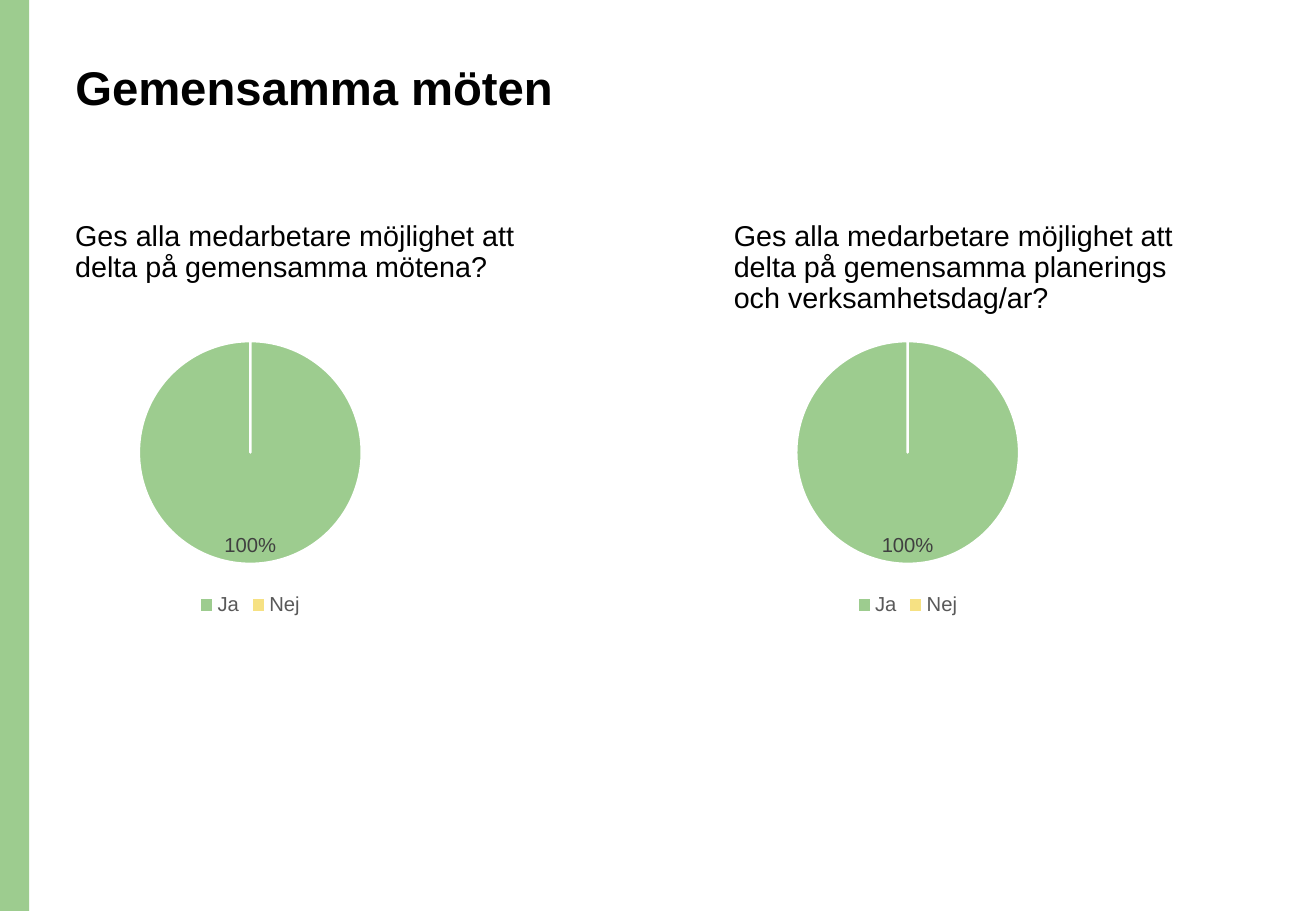
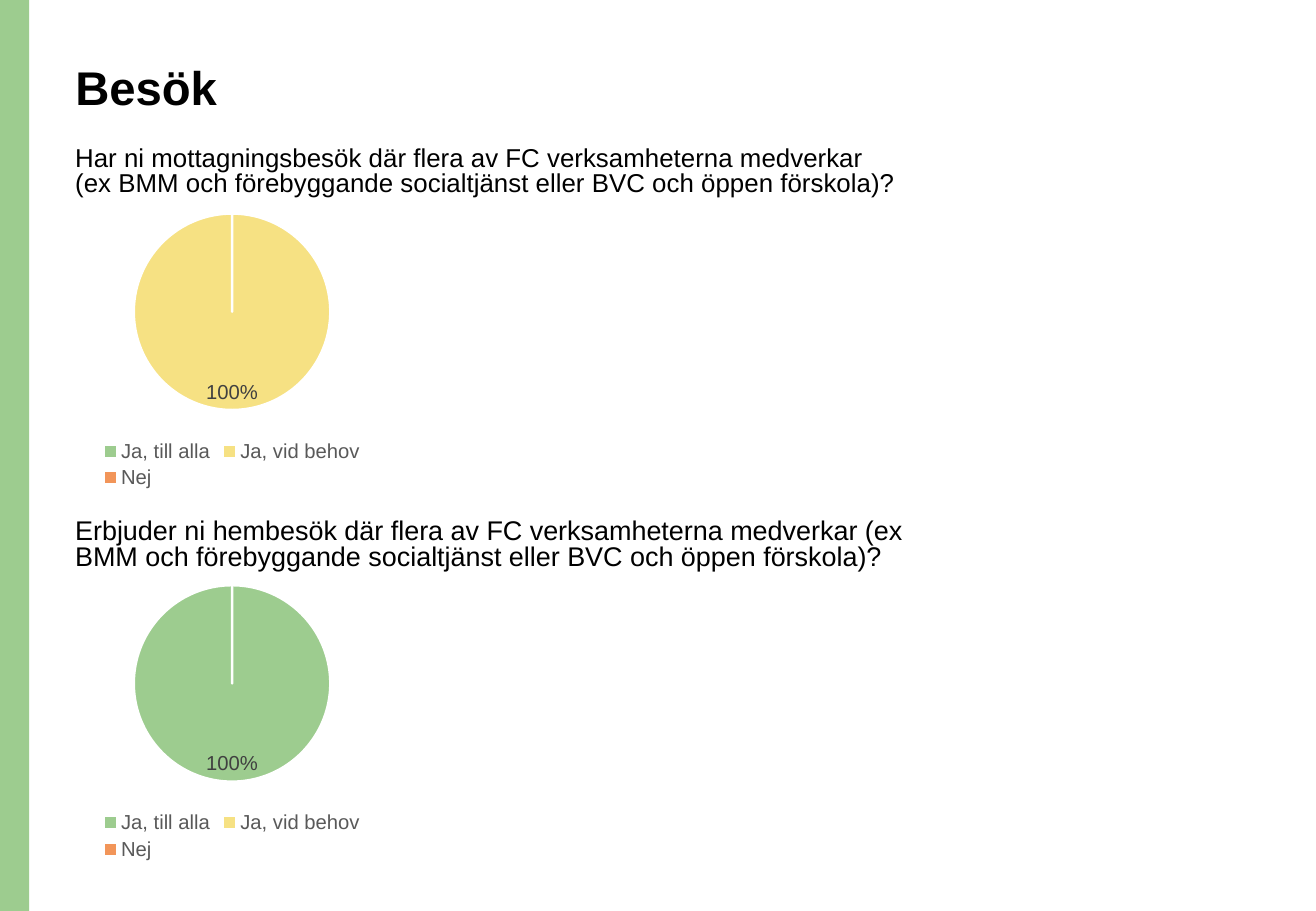
from lxml import etree
from pptx import Presentation
from pptx.chart.data import CategoryChartData
from pptx.dml.color import RGBColor
from pptx.enum.chart import XL_CHART_TYPE, XL_LABEL_POSITION, XL_LEGEND_POSITION
from pptx.enum.shapes import MSO_SHAPE
from pptx.enum.text import MSO_ANCHOR, MSO_AUTO_SIZE, PP_ALIGN
from pptx.oxml import parse_xml
from pptx.util import Inches, Pt

PIE = XL_CHART_TYPE.PIE
INSIDE_END = XL_LABEL_POSITION.INSIDE_END
LEGEND_BOTTOM = XL_LEGEND_POSITION.BOTTOM
RECTANGLE = MSO_SHAPE.RECTANGLE
TOP = MSO_ANCHOR.TOP
NO_AUTO_SIZE = MSO_AUTO_SIZE.NONE
LEFT = PP_ALIGN.LEFT

FONT = "Arial"
COLORS = {name: RGBColor.from_string(value) for name, value in {
    "green": "9DCC8F", "yellow": "F6E183", "orange": "F29559",
    "black": "000000", "white": "FFFFFF", "label": "404040", "legend": "595959",
}.items()}
SLICE_COLORS = ["green", "yellow", "orange"]
CHART_NS = "http://schemas.openxmlformats.org/drawingml/2006/chart"
MARGIN = 0.52
YES_NO = ["Ja", "Nej"]
VISIT_ANSWERS = ["Ja, till alla", "Ja, vid behov", "Nej"]

# Each question: text, box (left, top, width, height), size, line spacing,
# chart position (left, top), categories, values
SLIDES = [
    ("Gemensamma möten", [
        ("Ges alla medarbetare möjlighet att delta på gemensamma mötena?",
         (MARGIN, 1.78, 3.92, 1.02), 17, 0.9, (0.67, 2.67), YES_NO, (1, 0)),
        ("Ges alla medarbetare möjlighet att delta på gemensamma planerings "
         "och verksamhetsdag/ar?",
         (5.94, 1.78, 3.92, 1.02), 17, 0.9, (6.08, 2.67), YES_NO, (1, 0)),
    ]),
    ("Besök", [
        ("Har ni mottagningsbesök där flera av FC verksamheterna medverkar "
         "(ex BMM och förebyggande socialtjänst eller BVC och öppen förskola)?",
         (MARGIN, 1.17, 7.01, 0.57), 15.3, 0.8, (MARGIN, 1.62), VISIT_ANSWERS, (0, 1, 0)),
        ("Erbjuder ni hembesök där flera av FC verksamheterna medverkar "
         "(ex BMM och förebyggande socialtjänst eller BVC och öppen förskola)?",
         (MARGIN, 4.23, 7.49, 0.57), 16, 0.8, (MARGIN, 4.68), VISIT_ANSWERS, (1, 0, 0)),
    ]),
]


def write_text(shape, text, size, bold=False, line_spacing=0.9):
    frame = shape.text_frame
    frame.word_wrap = True
    frame.auto_size = NO_AUTO_SIZE
    frame.vertical_anchor = TOP
    paragraph = frame.paragraphs[0]
    paragraph.alignment = LEFT
    paragraph.line_spacing = line_spacing
    run = paragraph.add_run()
    run.text = text
    run.font.name = FONT
    run.font.size = Pt(size)
    run.font.bold = bold
    run.font.color.rgb = COLORS["black"]


def add_pie(slide, left, top, categories, values):
    data = CategoryChartData()
    data.categories = categories
    data.add_series("Series 1", values)
    chart = slide.shapes.add_chart(
        PIE, Inches(left), Inches(top), Inches(2.78), Inches(2.44), data).chart
    chart.has_title = False
    chart.font.name = FONT
    chart.font.size = Pt(10)
    chart.font.color.rgb = COLORS["black"]

    chart.has_legend = True
    chart.legend.position = LEGEND_BOTTOM
    chart.legend.include_in_layout = False
    chart.legend.font.name = FONT
    chart.legend.font.size = Pt(12)
    chart.legend.font.color.rgb = COLORS["legend"]

    plot = chart.plots[0]
    plot.vary_by_categories = True
    series = plot.series[0]
    labels = series.data_labels
    labels.show_value = True
    labels.show_percentage = False
    labels.number_format = "0%"
    labels.number_format_is_linked = False
    labels.position = INSIDE_END
    labels.font.name = FONT
    labels.font.size = Pt(12)
    labels.font.color.rgb = COLORS["label"]

    # Slices; empty ones carry no label
    hidden_count = 0
    for index, value in enumerate(values):
        slice_format = series.points[index].format
        slice_format.fill.solid()
        slice_format.fill.fore_color.rgb = COLORS[SLICE_COLORS[index]]
        slice_format.line.color.rgb = COLORS["white"]
        slice_format.line.width = Pt(1.5)
        if value == 0:
            hidden = parse_xml(f'<c:dLbl xmlns:c="{CHART_NS}"/>')
            etree.SubElement(hidden, f"{{{CHART_NS}}}idx", val=str(index))
            etree.SubElement(hidden, f"{{{CHART_NS}}}delete", val="1")
            labels._element.insert(hidden_count, hidden)
            hidden_count += 1


presentation = Presentation()
presentation.slide_width = Inches(10.83)
presentation.slide_height = Inches(7.5)

# Shared title position
layout = presentation.slide_layouts[5]
title_holder = layout.placeholders[0]
title_holder.left, title_holder.top = Inches(MARGIN), Inches(0.48)
title_holder.width, title_holder.height = Inches(9.34), Inches(1.02)

slides = [presentation.slides.add_slide(layout) for _ in SLIDES]

# Green side band, moved to the master so that every slide shows it
band = slides[0].shapes.add_shape(RECTANGLE, 0, 0, Inches(0.24), presentation.slide_height)
band.shadow.inherit = False
band.fill.solid()
band.fill.fore_color.rgb = COLORS["green"]
band.line.fill.background()
presentation.slide_master.shapes._spTree.insert(2, band._element)

# Titles, questions and charts
for slide, (title, questions) in zip(slides, SLIDES):
    write_text(slide.shapes.title, title, 28, bold=True)
    for question, box, size, spacing, (left, top), categories, values in questions:
        question_box = slide.shapes.add_textbox(*[Inches(length) for length in box])
        write_text(question_box, question, size, line_spacing=spacing)
        add_pie(slide, left, top, categories, values)

presentation.save("out.pptx")
